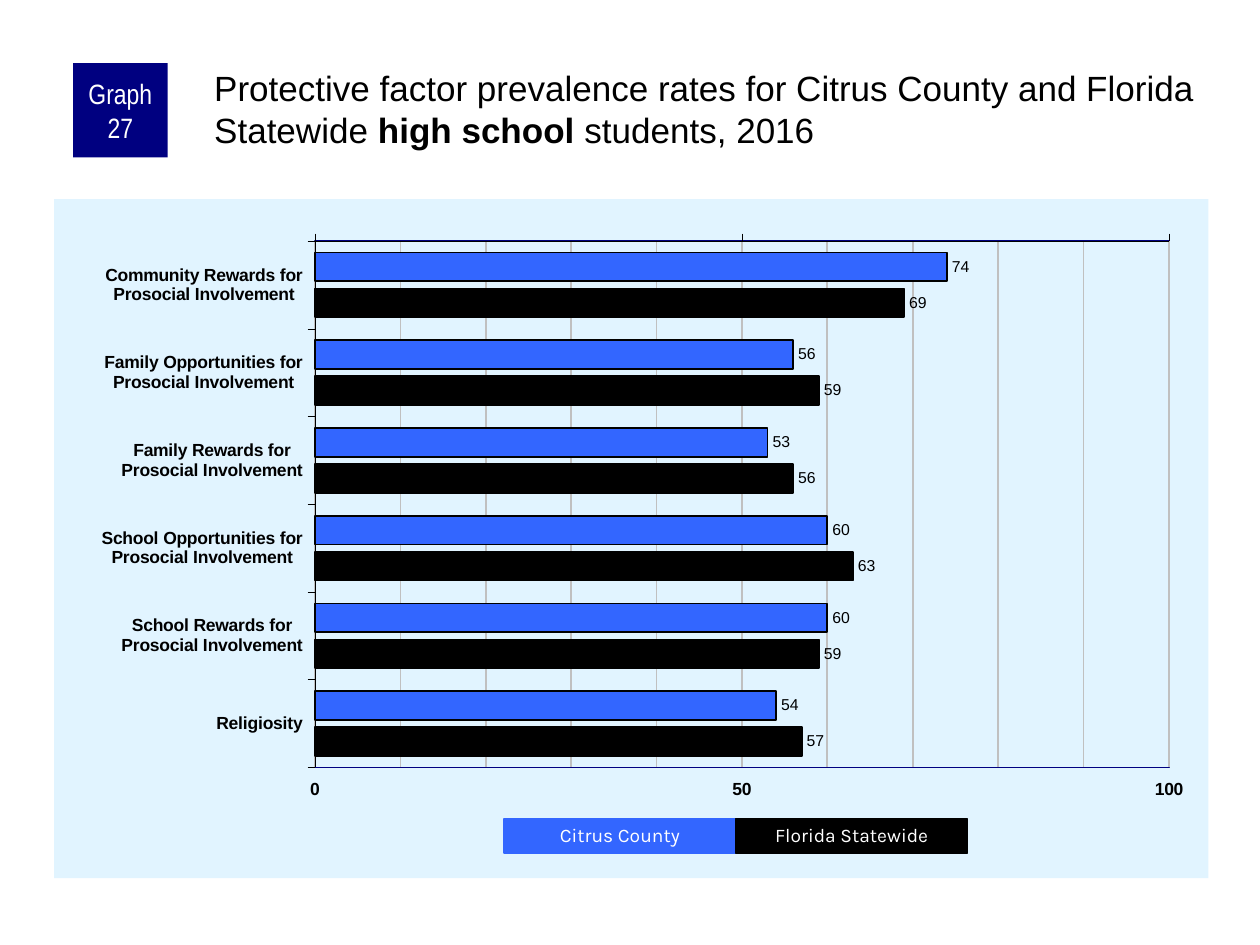
from lxml import etree
from pptx import Presentation
from pptx.chart.data import CategoryChartData
from pptx.dml.color import RGBColor
from pptx.enum import chart as ch, shapes, text
from pptx.oxml import parse_xml
from pptx.oxml.ns import nsdecls, qn
from pptx.util import Inches, Pt

BLACK = RGBColor(0, 0, 0)
WHITE = RGBColor(255, 255, 255)
NAVY = RGBColor(0, 0, 0x80)
BLUE = RGBColor(0x33, 0x66, 0xFF)
PALE = RGBColor(0xE1, 0xF4, 0xFF)
GRAY = RGBColor(0xC0, 0xC0, 0xC0)

FACTORS = [
    "Community Rewards for\nProsocial Involvement",
    "Family Opportunities for\nProsocial Involvement",
    "Family Rewards for\nProsocial Involvement",
    "School Opportunities for\nProsocial Involvement",
    "School Rewards for\nProsocial Involvement",
    "Religiosity",
]
GROUPS = [
    ("Citrus County", BLUE, (74, 56, 53, 60, 60, 54)),
    ("Florida Statewide", BLACK, (69, 59, 56, 63, 59, 57)),
]


def set_font(font, size, color=BLACK, name="Arial", bold=False):
    font.size, font.name, font.bold = Pt(size), name, bold
    font.color.rgb = color


def set_line(line, color, width):
    line.color.rgb = color
    line.width = Pt(width)


def add_box(s, x, y, w, h, fill, label, size, font):
    sp = s.shapes.add_shape(shapes.MSO_SHAPE.RECTANGLE,
                            Inches(x), Inches(y), Inches(w), Inches(h))
    sp.shadow.inherit = False
    sp.fill.solid()
    sp.fill.fore_color.rgb = fill
    sp.line.fill.background()
    tf = sp.text_frame
    tf.text = label
    tf.word_wrap = True
    tf.vertical_anchor = text.MSO_ANCHOR.MIDDLE
    tf.margin_left = tf.margin_right = Inches(0.05)
    tf.margin_top = tf.margin_bottom = 0
    p = tf.paragraphs[0]
    p.alignment = text.PP_ALIGN.CENTER
    set_font(p.runs[0].font, size, WHITE, font)
    return sp


def add_header(s, x, y, w):
    # Graph number
    add_box(s, x, y, 0.75, 0.75, NAVY, "Graph 27", 16, "Arial Narrow")
    # Title
    left = 1.09
    tb = s.shapes.add_textbox(Inches(x + left), Inches(y), Inches(w - left), Inches(0.83))
    tf = tb.text_frame
    tf.word_wrap = True
    tf.margin_left = tf.margin_top = Inches(0.03)
    tf.margin_right = tf.margin_bottom = 0
    for words, bold in (
        ("Protective factor prevalence rates for Citrus County and Florida Statewide ", False),
        ("high school ", True),
        ("students, 2016", False),
    ):
        r = tf.paragraphs[0].add_run()
        r.text = words
        set_font(r.font, 20, bold=bold)


def style_areas(chart):
    # Inner plot position, plot border and chart background
    space = chart._chartSpace
    plot_area = space.find(".//" + qn("c:plotArea"))
    old = plot_area.find(qn("c:layout"))
    if old is not None:
        plot_area.remove(old)
    places = "".join(f'<c:{tag} val="{val}"/>' for tag, val in (
        ("layoutTarget", "inner"), ("xMode", "edge"), ("yMode", "edge"),
        ("x", 0.226), ("y", 0.062), ("w", 0.74), ("h", 0.775)))
    plot_area.insert(0, parse_xml(
        f'<c:layout {nsdecls("c")}><c:manualLayout>{places}</c:manualLayout></c:layout>'))
    plot_area.append(parse_xml(
        f'<c:spPr {nsdecls("c", "a")}><a:noFill/><a:ln w="12700"><a:solidFill>'
        f'<a:srgbClr val="{NAVY}"/></a:solidFill></a:ln></c:spPr>'))
    space.find(qn("c:chart")).addnext(parse_xml(
        f'<c:spPr {nsdecls("c", "a")}><a:solidFill><a:srgbClr val="{PALE}"/></a:solidFill>'
        '<a:ln><a:noFill/></a:ln></c:spPr>'))


def add_rates_chart(s, x, y, w, h):
    data = CategoryChartData()
    data.categories = FACTORS
    for name, _, rates in GROUPS:
        data.add_series(name, rates)
    chart = s.shapes.add_chart(ch.XL_CHART_TYPE.BAR_CLUSTERED, Inches(x), Inches(y),
                               Inches(w), Inches(h), data).chart
    chart.has_legend = chart.has_title = False
    set_font(chart.font, 11.8)
    style_areas(chart)

    # Bars
    plot = chart.plots[0]
    plot.gap_width, plot.overlap = 80, -25
    plot.vary_by_categories = False
    for series, (_, color, _) in zip(plot.series, GROUPS):
        series.format.fill.solid()
        series.format.fill.fore_color.rgb = color
        set_line(series.format.line, BLACK, 1)
        labels = series.data_labels
        labels.show_value = True
        labels.position = ch.XL_LABEL_POSITION.OUTSIDE_END
        set_font(labels.font, 9)

    # Axes
    cat, val = chart.category_axis, chart.value_axis
    for axis in (cat, val):
        set_font(axis.tick_labels.font, 10, bold=True)
        set_line(axis.format.line, BLACK, 0.25)
        axis.major_tick_mark = ch.XL_TICK_MARK.OUTSIDE
        axis.minor_tick_mark = ch.XL_TICK_MARK.NONE
    cat.reverse_order = True
    val.tick_label_position = ch.XL_TICK_LABEL_POSITION.HIGH
    val.minimum_scale, val.maximum_scale = 0, 100
    val.major_unit, val.minor_unit = 50, 10
    val.has_major_gridlines = val.has_minor_gridlines = True
    for grid in (val.major_gridlines, ):
        set_line(grid.format.line, GRAY, 1)
    minor = val._element.find(qn("c:minorGridlines"))
    major = val._element.find(qn("c:majorGridlines"))
    minor.append(parse_xml(etree.tostring(major.find(qn("c:spPr")))))


def add_legend(s, x, y, w, h):
    step = w / len(GROUPS)
    for i, (name, color, _) in enumerate(GROUPS):
        sp = add_box(s, x + i * step, y, step, h, color, name, 11, "Karla")
        set_line(sp.line, color, 0.75)
        sp.text_frame.paragraphs[0].line_spacing = 0.9


def main():
    prs = Presentation()
    prs.slide_width, prs.slide_height = Inches(10), Inches(7.5)
    s = prs.slides.add_slide(prs.slide_layouts[6])
    add_rates_chart(s, 0.43, 1.58, 9.16, 5.39)
    add_header(s, 0.58, 0.5, 9.01)
    add_legend(s, 4, 6.5, 3.68, 0.27)
    prs.save("out.pptx")


if __name__ == "__main__":
    main()
